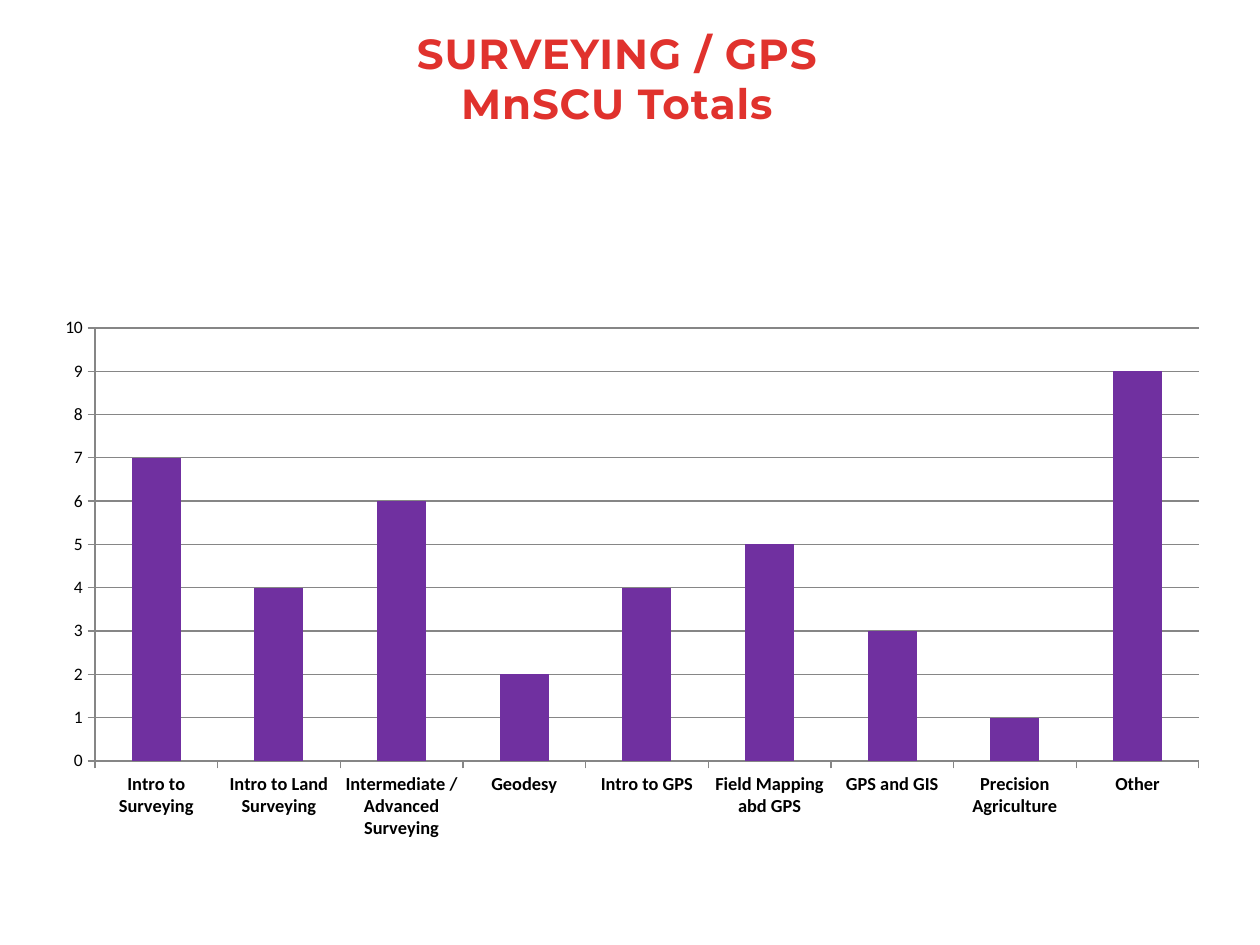
from dataclasses import dataclass

from lxml import etree
from pptx import Presentation
from pptx import util as u
from pptx.chart.data import CategoryChartData
from pptx.dml.color import RGBColor
from pptx.enum import chart as charts
from pptx.enum import text
from pptx.oxml.ns import qn

PX_PER_INCH = 126
COLOURS = {
    "title": "E0322D",
    "bar": "7030A0",
    "label": "000000",
    "line": "868686",
    "background": "FFFFFF",
}


@dataclass(frozen=True)
class Box:
    left: int
    top: int
    width: int
    height: int


@dataclass(frozen=True)
class Course:
    name: str
    total: int


TITLE_BOX = Box(258, 21, 718, 115)
CHART_BOX = Box(42, 307, 1181, 544)
PLOT_BOX = Box(95, 328, 1104, 433)
TITLE_LINES = ["SURVEYING / GPS", "MnSCU Totals"]
COURSES = [
    Course("Intro to Surveying", 7),
    Course("Intro to Land Surveying", 4),
    Course("Intermediate / Advanced Surveying", 6),
    Course("Geodesy", 2),
    Course("Intro to GPS", 4),
    Course("Field Mapping abd GPS", 5),
    Course("GPS and GIS", 3),
    Course("Precision Agriculture", 1),
    Course("Other", 9),
]


def px(length: int) -> u.Emu:
    return u.Emu(round(length * u.Inches(1) / PX_PER_INCH))


def colour(name: str) -> RGBColor:
    return RGBColor.from_string(COLOURS[name])


def place(box: Box) -> tuple:
    return px(box.left), px(box.top), px(box.width), px(box.height)


def fill_title(shape, box: Box, lines: list[str]) -> None:
    shape.left, shape.top, shape.width, shape.height = place(box)
    frame = shape.text_frame
    frame.word_wrap = True
    frame.auto_size = text.MSO_AUTO_SIZE.SHAPE_TO_FIT_TEXT
    frame.vertical_anchor = text.MSO_ANCHOR.TOP
    for index, line in enumerate(lines):
        paragraph = frame.add_paragraph() if index else frame.paragraphs[0]
        paragraph.alignment = text.PP_ALIGN.CENTER
        run = paragraph.add_run()
        run.text = line
        run.font.name = "Montserrat"
        run.font.size = u.Pt(24)
        run.font.bold = True
        run.font.color.rgb = colour("title")
        run.font._element.set("spc", "50")


def style_line(line) -> None:
    line.color.rgb = colour("line")
    line.width = u.Pt(0.75)


def set_plot_layout(chart, outer: Box, inner: Box) -> None:
    plot_area = chart._chartSpace.find(f".//{qn('c:plotArea')}")
    layout = plot_area.find(qn("c:layout"))
    if layout is None:
        layout = etree.Element(qn("c:layout"))
        plot_area.insert(0, layout)
    manual = etree.SubElement(layout, qn("c:manualLayout"))
    settings = {
        "layoutTarget": "inner",
        "xMode": "edge",
        "yMode": "edge",
        "x": (inner.left - outer.left) / outer.width,
        "y": (inner.top - outer.top) / outer.height,
        "w": inner.width / outer.width,
        "h": inner.height / outer.height,
    }
    for name, value in settings.items():
        etree.SubElement(manual, qn(f"c:{name}")).set("val", str(value))


def add_course_chart(slide, box: Box, courses: list[Course]) -> None:
    data = CategoryChartData(number_format="General")
    data.categories = [course.name for course in courses]
    data.add_series("Series 1", [course.total for course in courses])
    chart = slide.shapes.add_chart(
        charts.XL_CHART_TYPE.COLUMN_CLUSTERED, *place(box), data
    ).chart
    chart.has_legend = False
    chart.has_title = False
    chart.font.name = "Calibri"
    chart.font.size = u.Pt(10)
    chart.font.color.rgb = colour("label")

    plot = chart.plots[0]
    plot.gap_width = 150
    plot.vary_by_categories = False
    bars = plot.series[0].format.fill
    bars.solid()
    bars.fore_color.rgb = colour("bar")

    for axis in (chart.category_axis, chart.value_axis):
        axis.major_tick_mark = charts.XL_TICK_MARK.OUTSIDE
        axis.minor_tick_mark = charts.XL_TICK_MARK.NONE
        style_line(axis.format.line)
    labels = chart.category_axis.tick_labels.font
    labels.name = "Calibri"
    labels.size = u.Pt(10.5)
    labels.bold = True
    labels.color.rgb = colour("label")
    values = chart.value_axis
    values.minimum_scale, values.maximum_scale, values.major_unit = 0, 10, 1
    values.has_major_gridlines = True
    style_line(values.major_gridlines.format.line)
    set_plot_layout(chart, box, PLOT_BOX)


def main() -> None:
    presentation = Presentation()
    presentation.slide_width = u.Inches(10)
    presentation.slide_height = u.Inches(7.5)
    slide = presentation.slides.add_slide(presentation.slide_layouts[5])
    slide.background.fill.solid()
    slide.background.fill.fore_color.rgb = colour("background")
    add_course_chart(slide, CHART_BOX, COURSES)
    fill_title(slide.shapes.title, TITLE_BOX, TITLE_LINES)
    presentation.save("out.pptx")


if __name__ == "__main__":
    main()
